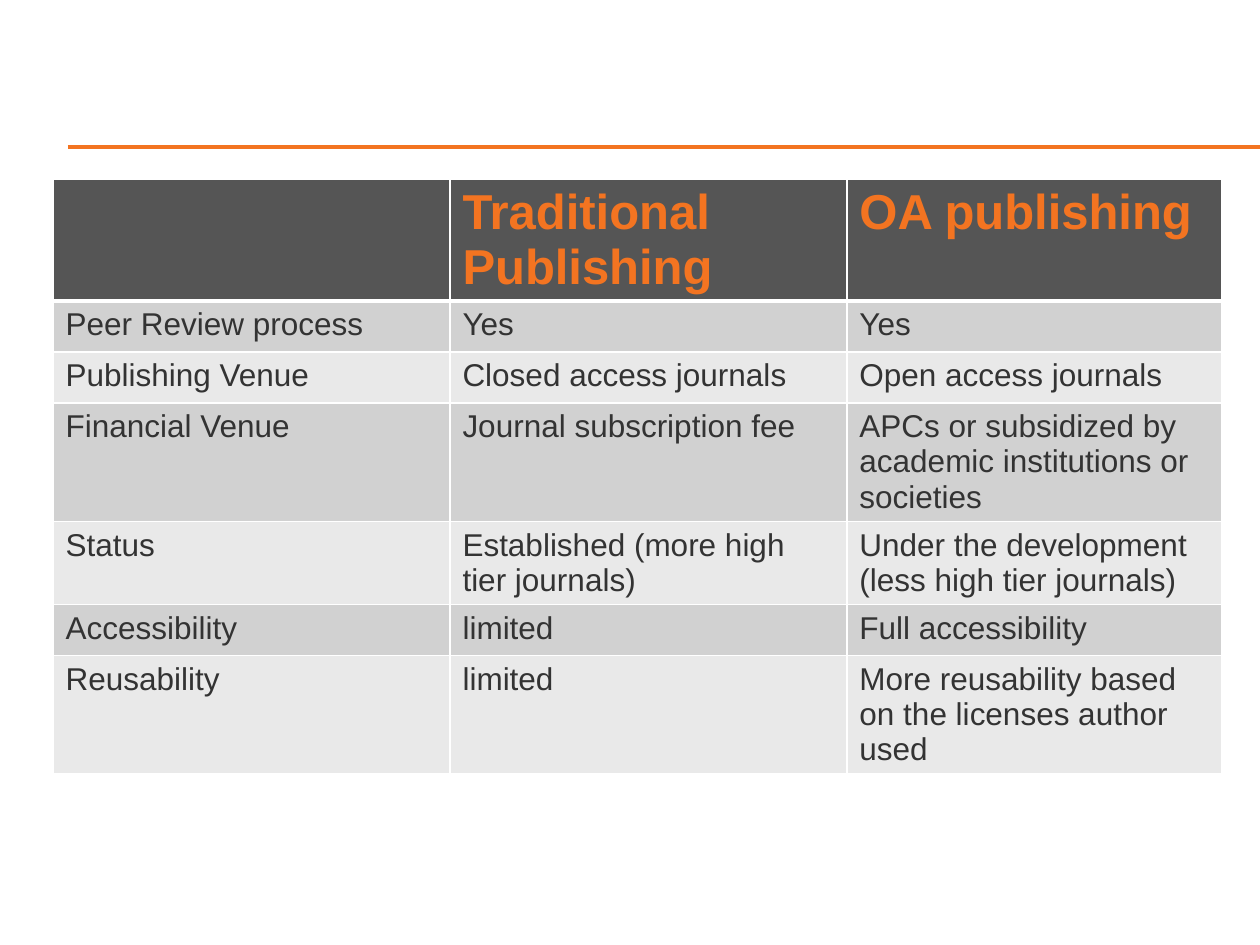
from lxml.etree import SubElement
from pptx import Presentation
from pptx.dml.color import RGBColor
from pptx.enum.shapes import MSO_CONNECTOR
from pptx.oxml.ns import qn
from pptx.util import Pt

PX = 914400 // 126
FONT = "Arial"
COLORS = {
    "accent": "F37421",
    "header": "555555",
    "odd": "D1D1D1",
    "even": "E9E9E9",
    "text": "333333",
    "border": "FFFFFF",
}
COLUMN_WIDTHS = [397, 397, 375]
ROW_HEIGHTS = [121, 51, 51, 118, 83, 51, 118]
COMPARISON = [
    ["", "Traditional Publishing", "OA publishing"],
    ["Peer Review process", "Yes", "Yes"],
    ["Publishing Venue", "Closed access journals", "Open access journals"],
    ["Financial Venue", "Journal subscription fee",
     "APCs or subsidized by academic institutions or societies"],
    ["Status", "Established (more high tier journals)",
     "Under the development (less high tier journals)"],
    ["Accessibility", "limited", "Full accessibility"],
    ["Reusability", "limited", "More reusability based on the licenses author used"],
]


def color(name):
    return RGBColor.from_string(COLORS[name])


def add_rule(page, left, top, width):
    rule = page.shapes.add_connector(
        MSO_CONNECTOR.STRAIGHT, left * PX, top * PX, (left + width) * PX, top * PX)
    rule.line.color.rgb = color("accent")
    rule.line.width = Pt(2)
    SubElement(rule._element.spPr, qn("a:effectLst"))


def set_borders(cell, widths):
    properties = cell._tc.get_or_add_tcPr()
    for position, (side, points) in enumerate(widths.items()):
        border = properties.makeelement(qn(f"a:ln{side}"), {"w": str(Pt(points))})
        fill = SubElement(border, qn("a:solidFill"))
        SubElement(fill, qn("a:srgbClr"), val=COLORS["border"])
        properties.insert(position, border)


def fill_cell(cell, text, row):
    header = row == 0
    cell.fill.solid()
    cell.fill.fore_color.rgb = color("header" if header else "odd" if row % 2 else "even")
    set_borders(cell, {"L": 1, "R": 1, "T": 3 if row == 1 else 1, "B": 3 if header else 1})
    para = cell.text_frame.paragraphs[0]
    para.font.size = Pt(28 if header else 18)
    if text:
        span = para.add_run()
        span.text = text
        span.font.name = FONT
        span.font.size = Pt(28 if header else 18)
        span.font.bold = header
        span.font.color.rgb = color("accent" if header else "text")


def add_comparison(page, left, top):
    frame = page.shapes.add_table(
        len(ROW_HEIGHTS), len(COLUMN_WIDTHS), left * PX, top * PX,
        sum(COLUMN_WIDTHS) * PX, sum(ROW_HEIGHTS) * PX)
    table = frame.table
    for column, width in zip(table.columns, COLUMN_WIDTHS):
        column.width = width * PX
    for row, height in zip(table.rows, ROW_HEIGHTS):
        row.height = height * PX
    for row, texts in enumerate(COMPARISON):
        for column, text in enumerate(texts):
            fill_cell(table.cell(row, column), text, row)


def main():
    deck = Presentation()
    deck.slide_width = 1260 * PX
    deck.slide_height = 945 * PX
    page = deck.slides.add_slide(deck.slide_layouts[6])
    add_rule(page, 68, 147, 1192)
    add_comparison(page, 53, 179)
    deck.save("out.pptx")


if __name__ == "__main__":
    main()
